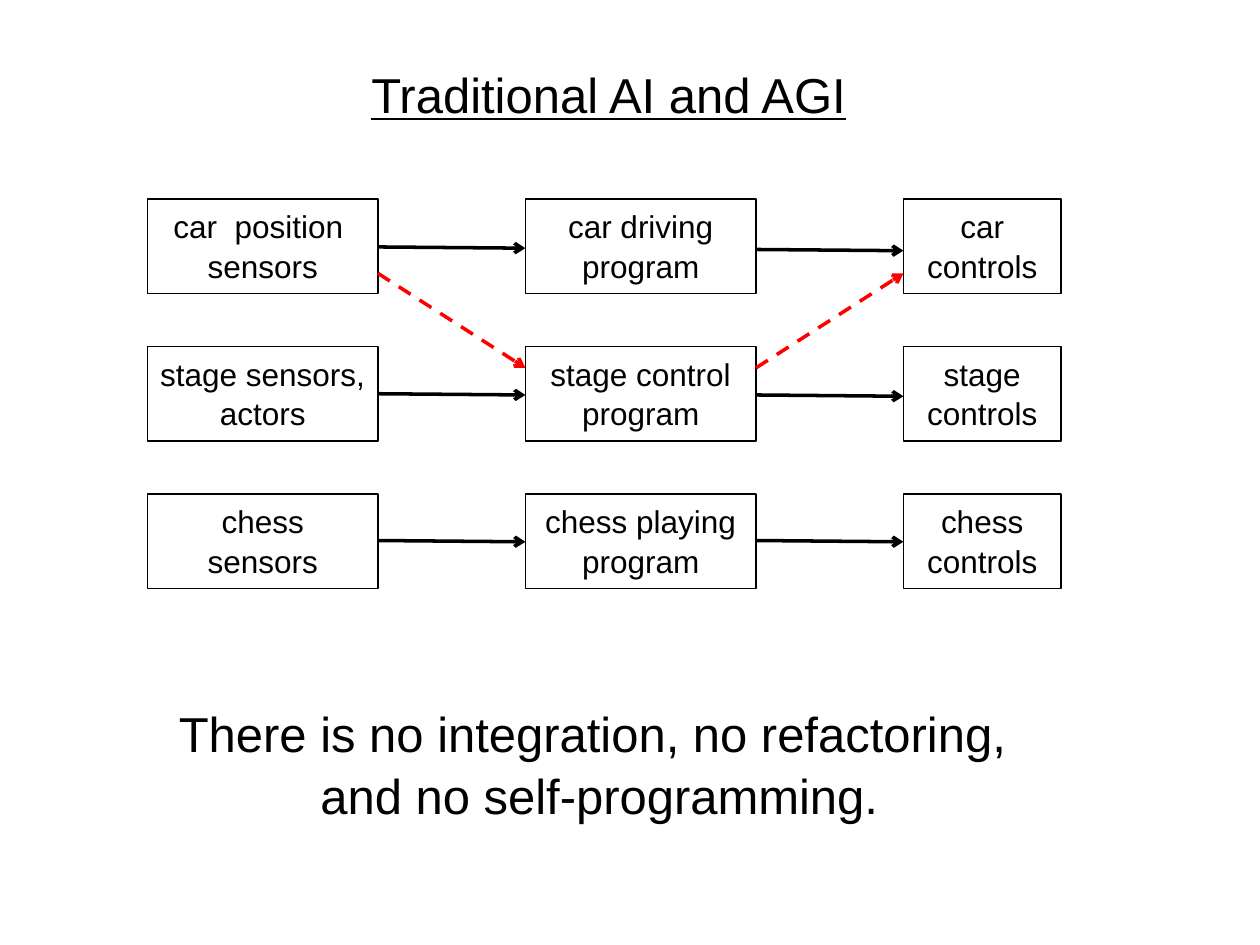
from dataclasses import dataclass

from lxml import etree
from pptx import Presentation
from pptx.dml.color import RGBColor
from pptx.enum.dml import MSO_LINE_DASH_STYLE as DASH
from pptx.enum.shapes import MSO_CONNECTOR, MSO_SHAPE
from pptx.enum.text import MSO_ANCHOR, MSO_AUTO_SIZE, PP_ALIGN
from pptx.oxml.ns import qn
from pptx.util import Inches, Pt


@dataclass(frozen=True)
class Theme:
    font: str = "Arial"
    ink: RGBColor = RGBColor(0, 0, 0)
    accent: RGBColor = RGBColor(0xFF, 0, 0)
    large: Pt = Pt(28)
    small: Pt = Pt(18)
    spacing: float = 1.05
    outline: Pt = Pt(1)
    arrow: Pt = Pt(2)


theme = Theme()


def write_lines(shape, lines, size, side_inset=0.1, underline=False):
    frame = shape.text_frame
    frame_format = {
        "word_wrap": True,
        "auto_size": MSO_AUTO_SIZE.NONE,
        "vertical_anchor": MSO_ANCHOR.TOP,
        "margin_left": Inches(side_inset),
        "margin_right": Inches(side_inset),
        "margin_top": Inches(0.05),
        "margin_bottom": Inches(0.05),
    }
    for name, value in frame_format.items():
        setattr(frame, name, value)
    frame.text = "\n".join(lines)
    for paragraph in frame.paragraphs:
        paragraph.alignment = PP_ALIGN.CENTER
        paragraph.line_spacing = theme.spacing
        font = paragraph.runs[0].font
        font_format = {"name": theme.font, "size": size, "underline": underline}
        for name, value in font_format.items():
            setattr(font, name, value)
        font.color.rgb = theme.ink


def add_arrow(start, end, color, dash=None):
    points = [Inches(value) for value in (*start, *end)]
    arrow = slide.shapes.add_connector(MSO_CONNECTOR.STRAIGHT, *points)
    arrow.line.color.rgb = color
    arrow.line.width = theme.arrow
    if dash:
        arrow.line.dash_style = dash
    properties = arrow.line._get_or_add_ln()
    etree.SubElement(properties, qn("a:tailEnd"), type="arrow")
    etree.SubElement(arrow._element.spPr, qn("a:effectLst"))


presentation = Presentation()
presentation.slide_width = Inches(10)
presentation.slide_height = Inches(7.5)
slide = presentation.slides.add_slide(presentation.slide_layouts[5])

# Title
title = slide.shapes.title
title_place = {"left": 2.58, "top": 0.44, "width": 4.5, "height": 0.57}
for name, value in title_place.items():
    setattr(title, name, Inches(value))
write_lines(title, ["Traditional AI and AGI"], theme.large, underline=True)

# Grid of sensors, programs and controls
column_lefts = [1.17, 4.17, 7.17]
column_widths = [1.83, 1.83, 1.25]
row_tops = [1.58, 2.75, 3.92]
box_height = 0.75
systems = [
    [("car  position ", "sensors"), ("car driving", "program"), ("car", "controls")],
    [("stage sensors,", "actors"), ("stage control", "program"), ("stage", "controls")],
    [("chess", "sensors"), ("chess playing", "program"), ("chess", "controls")],
]
for top, system in zip(row_tops, systems):
    for left, width, lines in zip(column_lefts, column_widths, system):
        box = slide.shapes.add_shape(
            MSO_SHAPE.RECTANGLE,
            Inches(left), Inches(top), Inches(width), Inches(box_height),
        )
        box.shadow.inherit = False
        box.fill.background()
        box.line.color.rgb = theme.ink
        box.line.width = theme.outline
        write_lines(box, lines, theme.small, side_inset=0.05)

# Arrows within each system, dropping slightly to the right
gaps = [(3, 4.17), (6, 7.17)]
arrow_drop = 0.01
arrow_heights = [(1.96, 1.98), (3.125, 3.135), (4.29, 4.29)]
for heights in arrow_heights:
    for (start, end), height in zip(gaps, heights):
        add_arrow((start, height), (end, height + arrow_drop), theme.ink)

# Dashed arrows crossing from the car system to the stage program and back
car_height, stage_height = 2.17, 2.92
crossings = [(car_height, stage_height), (stage_height, car_height)]
for (start, end), (start_height, end_height) in zip(gaps, crossings):
    add_arrow((start, start_height), (end, end_height), theme.accent, DASH.DASH)

# Closing statement
statement = slide.shapes.add_textbox(
    Inches(0.92), Inches(5.51), Inches(7.67), Inches(1.04)
)
write_lines(
    statement,
    ["There is no integration, no refactoring, ", "and no self-programming."],
    theme.large,
)

presentation.save("out.pptx")
